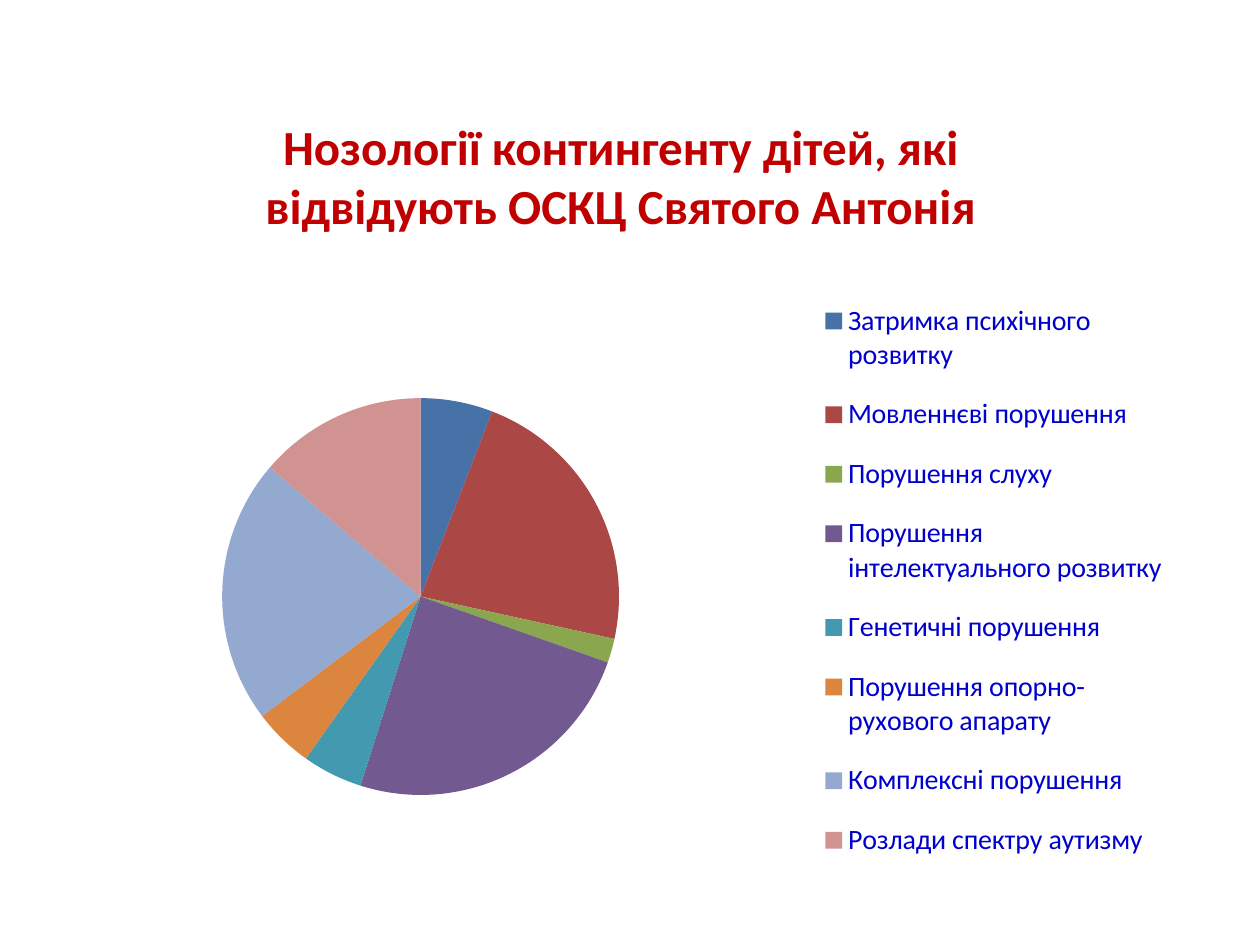
import pptx
import pptx.chart.data
import pptx.dml.color
import pptx.enum.chart
import pptx.enum.text
import pptx.oxml
import pptx.oxml.ns
import pptx.util
from pptx.util import Cm

FONT = "Calibri"
NOSOLOGIES = [
    ("Затримка психічного розвитку", 6, "4672A8"),
    ("Мовленнєві порушення", 23, "AB4744"),
    ("Порушення слуху", 2, "8AA64F"),
    ("Порушення інтелектуального розвитку", 25, "725990"),
    ("Генетичні порушення", 5, "4299B0"),
    ("Порушення опорно-рухового апарату", 5, "DC853E"),
    ("Комплексні порушення", 22, "93A9CF"),
    ("Розлади спектру аутизму", 14, "D19392"),
]


def color(hex_string):
    return pptx.dml.color.RGBColor.from_string(hex_string)


def format_font(font, size, hex_string, bold=False):
    font.name = FONT
    font.size = pptx.util.Pt(size)
    font.bold = bold
    font.color.rgb = color(hex_string)


def add_title(slide, text):
    shape = slide.shapes.add_textbox(Cm(3.91), Cm(1.7), Cm(17.2), Cm(3.66))
    text_frame = shape.text_frame
    text_frame.word_wrap = True
    text_frame.vertical_anchor = pptx.enum.text.MSO_ANCHOR.MIDDLE
    text_frame.text = text
    paragraph = text_frame.paragraphs[0]
    paragraph.alignment = pptx.enum.text.PP_ALIGN.CENTER
    format_font(paragraph.runs[0].font, 28, "C00000", bold=True)


def place_by_fractions(parent, position, x, y, width, height, inner=False):
    for layout in parent.findall(pptx.oxml.ns.qn("c:layout")):
        parent.remove(layout)
    target = '<c:layoutTarget val="inner"/>' if inner else ""
    parent.insert(position, pptx.oxml.parse_xml(
        f'<c:layout {pptx.oxml.ns.nsdecls("c")}><c:manualLayout>{target}'
        '<c:xMode val="edge"/><c:yMode val="edge"/>'
        f'<c:x val="{x}"/><c:y val="{y}"/><c:w val="{width}"/><c:h val="{height}"/>'
        '</c:manualLayout></c:layout>'))


def add_pie(slide, nosologies):
    names, values, fills = zip(*nosologies)
    data = pptx.chart.data.CategoryChartData()
    data.categories = names
    data.add_series("Series 1", values)
    chart = slide.shapes.add_chart(
        pptx.enum.chart.XL_CHART_TYPE.PIE,
        Cm(1.19), Cm(5.36), Cm(22.43), Cm(12.7), data).chart
    chart.has_title = False
    format_font(chart.font, 10, "000000")

    plot = chart.plots[0]
    plot.vary_by_categories = True
    for index, fill in enumerate(fills):
        point_format = plot.series[0].points[index].format
        point_format.fill.solid()
        point_format.fill.fore_color.rgb = color(fill)
        point_format.line.fill.background()

    chart.has_legend = True
    legend = chart.legend
    legend.position = pptx.enum.chart.XL_LEGEND_POSITION.RIGHT
    legend.include_in_layout = True
    format_font(legend.font, 16, "0000CC")
    plot_area = chart.element.find(".//" + pptx.oxml.ns.qn("c:plotArea"))
    legend_element = chart.element.find(".//" + pptx.oxml.ns.qn("c:legend"))
    place_by_fractions(plot_area, 0, 0, 0.21, 0.65, 0.63, inner=True)
    place_by_fractions(legend_element, 1, 0.68, 0.02, 0.32, 0.96)


def main():
    presentation = pptx.Presentation()
    presentation.slide_width = Cm(25.4)
    presentation.slide_height = Cm(19.05)
    slide = presentation.slides.add_slide(presentation.slide_layouts[6])
    add_title(slide, "Нозології контингенту дітей, які відвідують ОСКЦ Святого Антонія")
    add_pie(slide, NOSOLOGIES)
    presentation.save("out.pptx")


if __name__ == "__main__":
    main()
